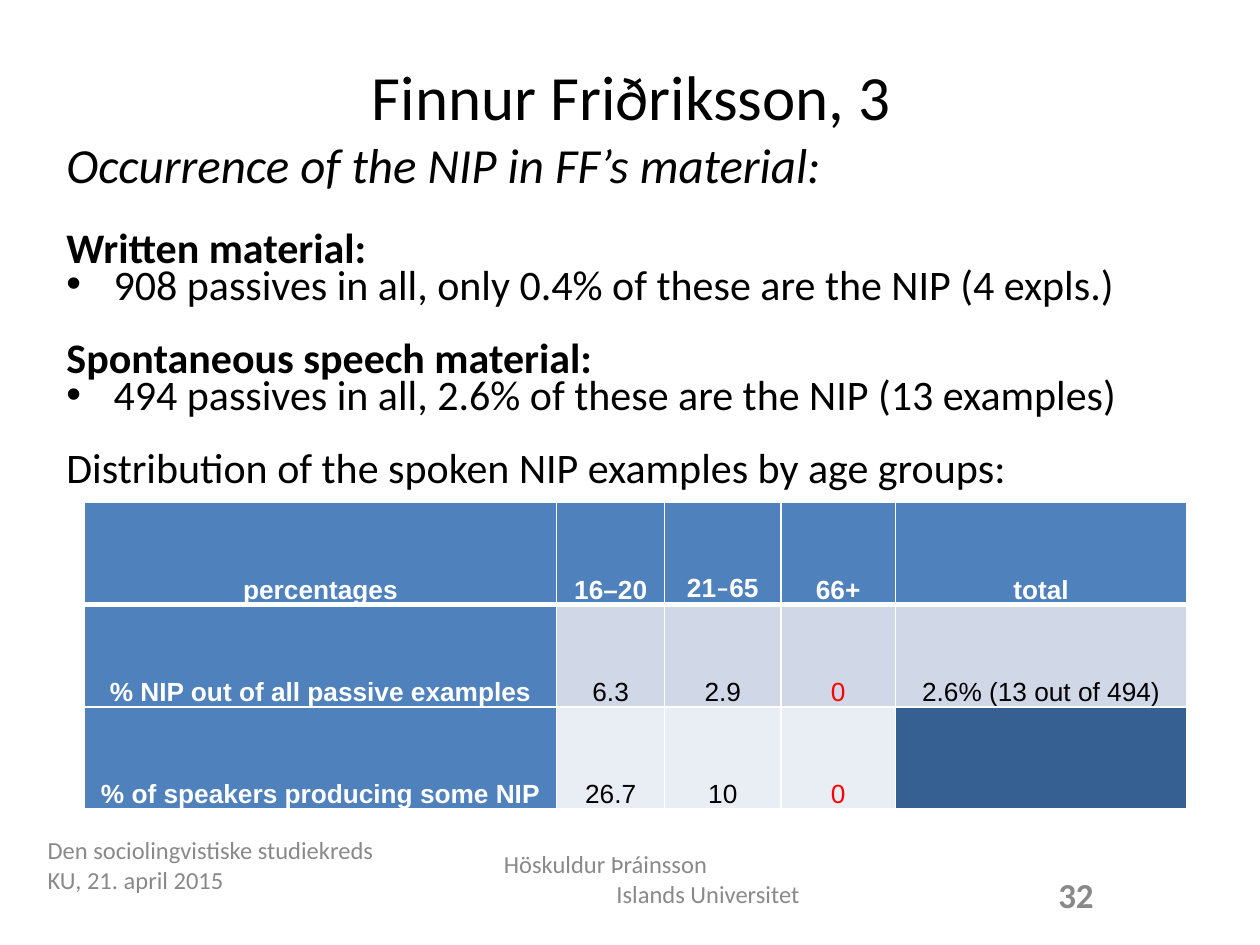
from lxml import etree
from pptx import Presentation
from pptx.dml.color import RGBColor
from pptx.enum.text import MSO_ANCHOR, PP_ALIGN
from pptx.oxml.ns import qn
from pptx.util import Cm, Pt

LEFT, CENTER, RIGHT = PP_ALIGN.LEFT, PP_ALIGN.CENTER, PP_ALIGN.RIGHT
TOP, MIDDLE, BOTTOM = MSO_ANCHOR.TOP, MSO_ANCHOR.MIDDLE, MSO_ANCHOR.BOTTOM

COLORS = {
    "text": "000000",
    "footer": "898989",
    "white": "FFFFFF",
    "header": "4F81BD",
    "band_dark": "D0D8E8",
    "band_light": "E9EDF4",
    "empty": "376092",
    "zero": "FF0000",
}

COLUMN_WIDTHS = [9.52, 2.18, 2.34, 2.31, 5.87]
ROW_HEIGHT = 2.06
TABLE_ROWS = [
    ["percentages", "16–20", "21–65", "66+", "total"],
    ["% NIP out of all passive examples", "6.3", "2.9", "0", "2.6% (13 out of 494)"],
    ["% of speakers producing some NIP", "26.7", "10", "0", ""],
]


def style_font(font, size, color, name="Calibri", bold=False, italic=False):
    font.name, font.size = name, Pt(size)
    font.bold, font.italic = bold, italic
    font.color.rgb = RGBColor.from_string(COLORS[color])


def add_box(page, left, top, width, height, anchor=MIDDLE):
    box = page.shapes.add_textbox(Cm(left), Cm(top), Cm(width), Cm(height))
    frame = box.text_frame
    frame.word_wrap = True
    frame.vertical_anchor = anchor
    return frame


def add_para(frame, text, size, color="text", align=LEFT, line=None, before=0,
             bullet=False, bold=False, italic=False):
    first = frame.paragraphs[0]
    para = first if not first.runs else frame.add_paragraph()
    para.text = text
    para.alignment = align
    if line:
        para.line_spacing = Pt(line)
    if before:
        para.space_before = Pt(before)
    if bullet:
        add_bullet(para)
    style_font(para.font, size, color, bold=bold, italic=italic)


def add_bullet(para):
    properties = para._p.get_or_add_pPr()
    properties.set("marL", str(Cm(0.95)))
    properties.set("indent", str(-Cm(0.95)))
    etree.SubElement(properties, qn("a:buFont")).set("typeface", "Arial")
    etree.SubElement(properties, qn("a:buChar")).set("char", "•")


def set_borders(cell, bottom, top):
    properties = cell._tc.get_or_add_tcPr()
    widths = {"a:lnL": 1, "a:lnR": 1, "a:lnT": top, "a:lnB": bottom}
    for position, (tag, width) in enumerate(widths.items()):
        line = etree.Element(qn(tag), w=str(Pt(width)))
        fill = etree.SubElement(line, qn("a:solidFill"))
        etree.SubElement(fill, qn("a:srgbClr")).set("val", COLORS["white"])
        properties.insert(position, line)


def cell_fill(row, column, text):
    if not text:
        return "empty"
    if row == 0 or column == 0:
        return "header"
    return "band_dark" if row == 1 else "band_light"


def fill_cell(cell, row, column, text):
    heading = row == 0 or column == 0
    cell.fill.solid()
    cell.fill.fore_color.rgb = RGBColor.from_string(COLORS[cell_fill(row, column, text)])
    set_borders(cell, bottom=3 if row == 0 else 1, top=3 if row == 1 else 1)
    cell.vertical_anchor = BOTTOM
    cell.margin_left = cell.margin_right = Cm(0.18)
    cell.margin_top = cell.margin_bottom = 0
    para = cell.text_frame.paragraphs[0]
    para.alignment = CENTER
    para.line_spacing = 1.15
    color = "white" if heading else "zero" if text == "0" else "text"
    style_font(para.font, 15, color, "Arial", bold=heading)
    # The dash between the ages 21 and 65 is set in Calibri
    for part in ["21", "–", "65"] if text == "21–65" else [text] if text else []:
        span = para.add_run()
        span.text = part
        if part == "–":
            span.font.name = "Calibri"


def add_age_table(page):
    table = page.shapes.add_table(
        len(TABLE_ROWS), len(COLUMN_WIDTHS), Cm(1.7), Cm(10.13),
        Cm(sum(COLUMN_WIDTHS)), Cm(ROW_HEIGHT * len(TABLE_ROWS))).table
    for column, width in zip(table.columns, COLUMN_WIDTHS):
        column.width = Cm(width)
    for row, texts in enumerate(TABLE_ROWS):
        table.rows[row].height = Cm(ROW_HEIGHT)
        for column, text in enumerate(texts):
            fill_cell(table.cell(row, column), row, column, text)


def add_findings(page):
    frame = add_box(page, 1.09, 2.92, 22.86, 13.56, TOP)
    add_para(frame, "Occurrence of the NIP in FF’s material:", 28, line=24, italic=True)
    add_para(frame, "Written material:", 24, line=21, before=24, bold=True)
    add_para(frame, "908 passives in all, only 0.4% of these are the NIP (4 expls.)",
             24, line=21, bullet=True)
    add_para(frame, "Spontaneous speech material:", 24, line=21, before=21, bold=True)
    add_para(frame, "494 passives in all, 2.6% of these are the NIP (13 examples)",
             24, line=21, bullet=True)
    add_para(frame, "Distribution of the spoken NIP examples by age groups:",
             24, line=21, before=21)


def add_footer(page):
    event = add_box(page, 0.71, 16.92, 7.59, 1.02)
    add_para(event, "Den sociolingvistiske studiekreds KU, 21. april 2015", 14, "footer")
    speaker = add_box(page, 9.91, 17.12, 6.63, 1.19)
    speaker.margin_right = Cm(0.42)
    add_para(speaker, "Höskuldur Þráinsson", 14, "footer")
    add_para(speaker, "Islands Universitet", 14, "footer", RIGHT)
    number = add_box(page, 18.11, 17.53, 4.19, 1.02)
    add_para(number, "32", 20, "footer", RIGHT, bold=True)


def main():
    deck = Presentation()
    deck.slide_width, deck.slide_height = Cm(25.4), Cm(19.05)
    page = deck.slides.add_slide(deck.slide_layouts[6])

    # Title
    title = add_box(page, 1.3, 1.12, 22.86, 1.6)
    add_para(title, "Finnur Friðriksson, 3", 36, align=CENTER)

    # Body, footer and table
    add_findings(page)
    add_footer(page)
    add_age_table(page)

    deck.save("out.pptx")


if __name__ == "__main__":
    main()
